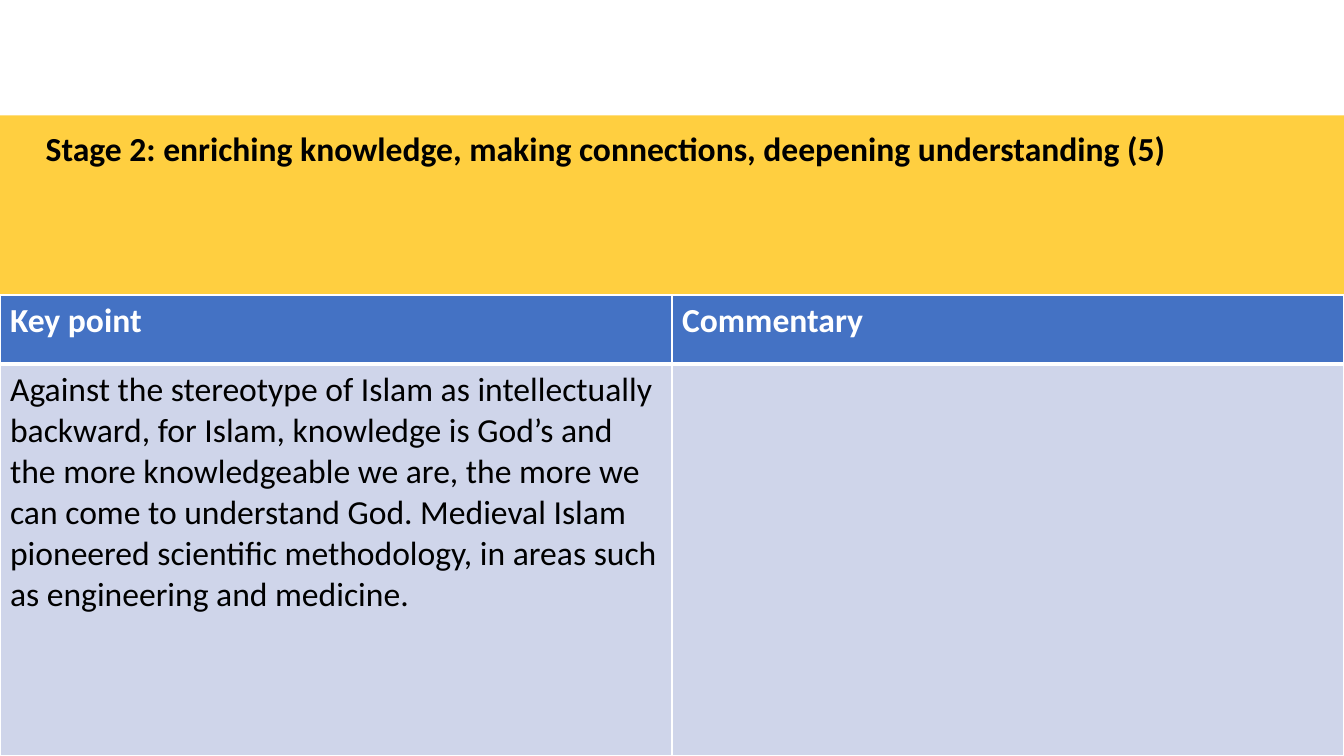
import dataclasses

import lxml.etree
import pptx
import pptx.dml.color
import pptx.enum.shapes
import pptx.oxml.ns
import pptx.util


@dataclasses.dataclass(frozen=True)
class Theme:
    font: str = "Calibri"
    text_size: int = 24
    page: str = "FFCF40"
    white: str = "FFFFFF"
    black: str = "000000"
    header: str = "4472C4"
    body: str = "CFD5EA"
    thin: int = 1
    thick: int = 3


def px(length):
    return pptx.util.Emu(length * 9525)


def rgb(colour):
    return pptx.dml.color.RGBColor.from_string(colour)


def write(frame, text, *, font, size, colour, bold=False):
    frame.word_wrap = True
    para = frame.paragraphs[0]
    para.font.size = pptx.util.Pt(size)
    if text:
        span = para.add_run()
        span.text = text
        span.font.name = font
        span.font.size = pptx.util.Pt(size)
        span.font.bold = bold
        span.font.color.rgb = rgb(colour)


class SlideBuilder:
    def __init__(self, deck, theme):
        self.theme = theme
        self.page = deck.slides.add_slide(deck.slide_layouts[6])
        fill = self.page.background.fill
        fill.solid()
        fill.fore_color.rgb = rgb(theme.page)

    def band(self, left, top, width, height, colour):
        box = self.page.shapes.add_shape(
            pptx.enum.shapes.MSO_SHAPE.RECTANGLE,
            px(left), px(top), px(width), px(height))
        box.shadow.inherit = False
        box.fill.solid()
        box.fill.fore_color.rgb = rgb(colour)
        box.line.fill.background()

    def title(self, left, top, width, height, text):
        box = self.page.shapes.add_textbox(px(left), px(top), px(width), px(height))
        write(box.text_frame, text, font=self.theme.font,
              size=self.theme.text_size, colour=self.theme.black, bold=True)

    def border(self, cell, side, points):
        qualified = pptx.oxml.ns.qn
        properties = cell._tc.get_or_add_tcPr()
        line = lxml.etree.SubElement(
            properties, qualified("a:ln" + side), w=str(pptx.util.Pt(points)))
        fill = lxml.etree.SubElement(line, qualified("a:solidFill"))
        lxml.etree.SubElement(fill, qualified("a:srgbClr"), val=self.theme.white)

    def table(self, left, top, width, row_heights, rows):
        theme = self.theme
        columns = len(rows[0])
        table = self.page.shapes.add_table(
            len(rows), columns, px(left), px(top), px(width), px(sum(row_heights))).table
        for row, height in zip(table.rows, row_heights):
            row.height = px(height)
        for row_index, texts in enumerate(rows):
            is_header = row_index == 0
            widths = {
                "L": theme.thin,
                "R": theme.thin,
                "T": theme.thick if row_index == 1 else theme.thin,
                "B": theme.thick if is_header else theme.thin,
            }
            for column_index, text in enumerate(texts):
                cell = table.cell(row_index, column_index)
                for side, points in widths.items():
                    self.border(cell, side, points)
                cell.fill.solid()
                cell.fill.fore_color.rgb = rgb(theme.header if is_header else theme.body)
                write(cell.text_frame, text, font=theme.font, size=theme.text_size,
                      colour=theme.white if is_header else theme.black, bold=is_header)


def main():
    deck = pptx.Presentation()
    deck.slide_width, deck.slide_height = px(1280), px(720)
    theme = Theme()
    slide = SlideBuilder(deck, theme)
    slide.band(0, 0, 1280, 110, theme.white)
    slide.title(34, 117, 1177, 87,
                "Stage 2: enriching knowledge, making connections, deepening understanding (5)")
    slide.table(0, 281, 1280, [66, 373], [
        ["Key point", "Commentary"],
        ["Against the stereotype of Islam as intellectually backward, for Islam, "
         "knowledge is God’s and the more knowledgeable we are, the more we can come "
         "to understand God. Medieval Islam pioneered scientific methodology, in areas "
         "such as engineering and medicine.", ""],
    ])
    deck.save("out.pptx")


if __name__ == "__main__":
    main()
